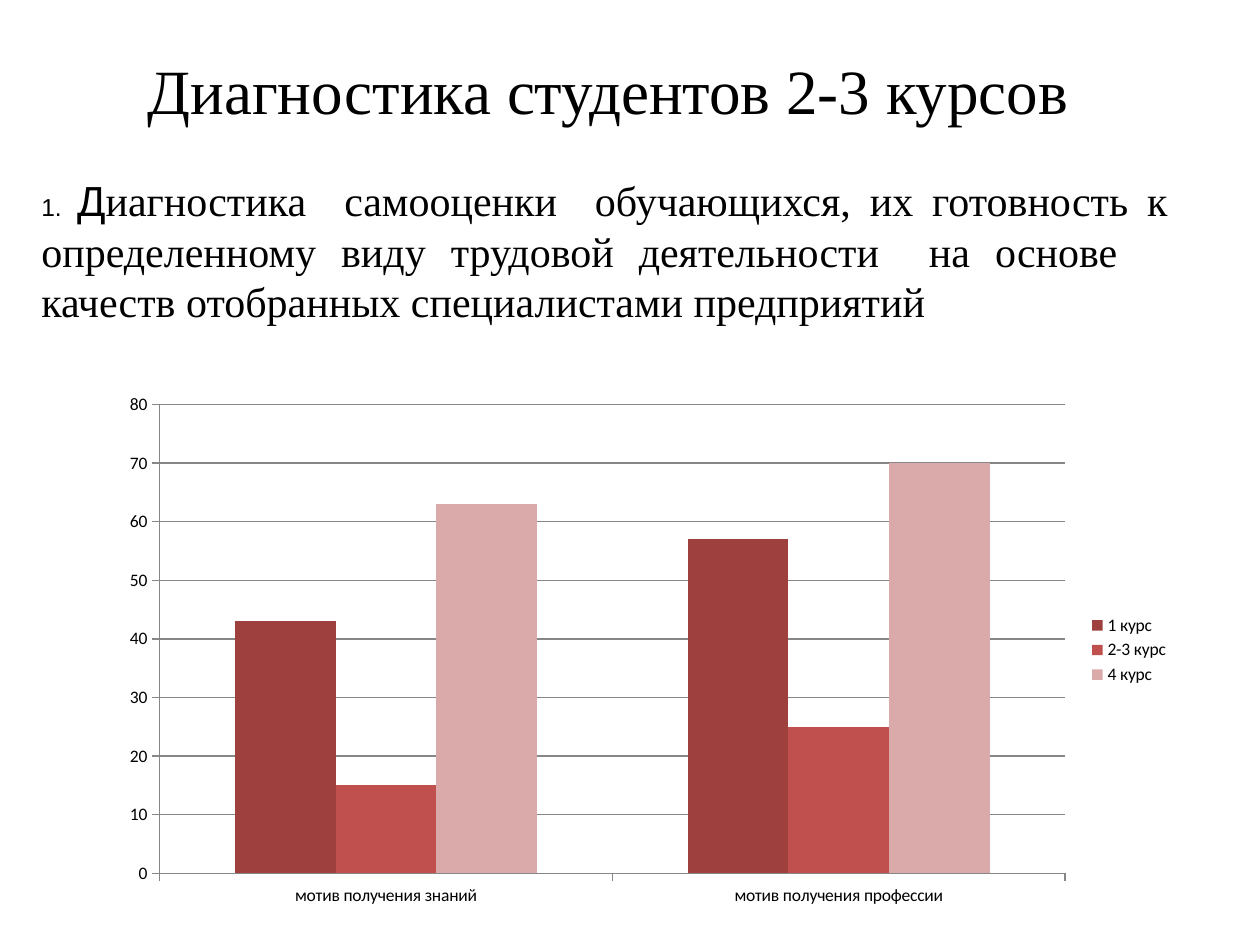
import pptx
import pptx.chart.data
import pptx.dml.color
import pptx.enum.chart
import pptx.enum.text
import pptx.util

Pt = pptx.util.Pt
ALIGN = pptx.enum.text.PP_ALIGN
CHART = pptx.enum.chart

COLOURS = {
    "text": "000000",
    "axis": "868686",
    "1 курс": "9E413E",
    "2-3 курс": "C0504D",
    "4 курс": "D9AAA9",
}
SCORES = {"1 курс": (43, 57), "2-3 курс": (15, 25), "4 курс": (63, 70)}
MOTIVES = ("мотив получения знаний", "мотив получения профессии")
SERIF = "Times New Roman"


def rgb(name):
    return pptx.dml.color.RGBColor.from_string(COLOURS[name])


def apply(target, values):
    for attribute, value in values.items():
        setattr(target, attribute, value)


class DiagnosticsSlide:
    def __init__(self, deck):
        self.slide = deck.slides.add_slide(deck.slide_layouts[6])

    def style_font(self, font, name, size):
        apply(font, {"name": name, "size": Pt(size)})
        font.color.rgb = rgb("text")

    def paragraph(self, box, runs, alignment):
        """Add a text box; runs are (text, font, size) tuples."""
        frame = self.slide.shapes.add_textbox(*map(Pt, box)).text_frame
        apply(frame, {"word_wrap": True,
                      "vertical_anchor": pptx.enum.text.MSO_ANCHOR.MIDDLE})
        line = frame.paragraphs[0]
        line.alignment = alignment
        for text, name, size in runs:
            run = line.add_run()
            run.text = text
            self.style_font(run.font, name, size)

    def columns(self, box, categories, series):
        data = pptx.chart.data.CategoryChartData()
        data.categories = categories
        for name, values in series.items():
            data.add_series(name, values)
        chart = self.slide.shapes.add_chart(
            CHART.XL_CHART_TYPE.COLUMN_CLUSTERED, *map(Pt, box), data).chart
        self.style_font(chart.font, "Calibri", 10)
        apply(chart, {"has_title": False, "has_legend": True})
        apply(chart.legend, {"position": CHART.XL_LEGEND_POSITION.RIGHT,
                             "include_in_layout": False})

        plot = chart.plots[0]
        apply(plot, {"gap_width": 150, "overlap": 0,
                     "vary_by_categories": False})
        for course in plot.series:
            course.format.fill.solid()
            course.format.fill.fore_color.rgb = rgb(course.name)

        apply(chart.value_axis, {"minimum_scale": 0, "maximum_scale": 80,
                                 "major_unit": 10,
                                 "has_major_gridlines": True})
        lines = [chart.value_axis.major_gridlines.format.line]
        for axis in (chart.category_axis, chart.value_axis):
            apply(axis, {"major_tick_mark": CHART.XL_TICK_MARK.OUTSIDE,
                         "minor_tick_mark": CHART.XL_TICK_MARK.NONE})
            lines.append(axis.format.line)
        for line in lines:
            line.color.rgb = rgb("axis")
            line.width = Pt(0.75)


def main():
    deck = pptx.Presentation()
    apply(deck, {"slide_width": Pt(720), "slide_height": Pt(540)})
    page = DiagnosticsSlide(deck)
    page.paragraph((28, 0, 648, 101.5),
                   [("Диагностика студентов 2-3 курсов ", SERIF, 36)],
                   ALIGN.CENTER)
    page.paragraph(
        (16.5, 96, 658, 94),
        [("1. ", "Arial", 14),
         ("Д", "Arial", 24),
         ("иагностика  самооценки  обучающихся, их готовность к "
          "определенному виду трудовой деятельности  на основе   "
          "качеств отобранных специалистами предприятий", SERIF, 24)],
        ALIGN.JUSTIFY)
    page.columns((62, 219.5, 613.5, 304), MOTIVES, SCORES)
    deck.save("out.pptx")


if __name__ == "__main__":
    main()
